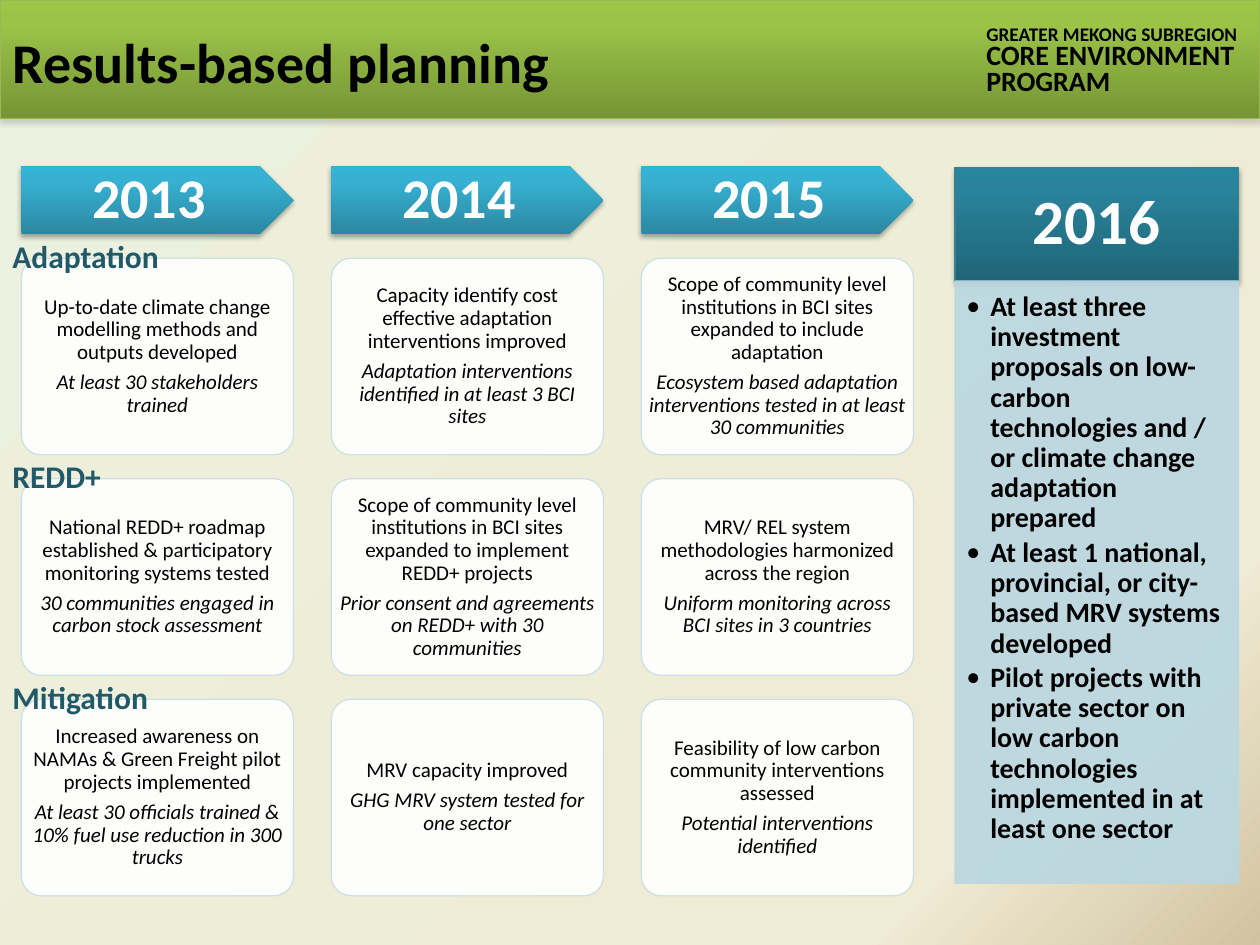
from dataclasses import dataclass
from typing import Any

import pptx
import pptx.dml.color
import pptx.enum.shapes
import pptx.enum.text
import pptx.oxml
import pptx.oxml.ns
import pptx.util

Inches = pptx.util.Inches
Pt = pptx.util.Pt
SHAPE = pptx.enum.shapes.MSO_SHAPE
ALIGN = pptx.enum.text.PP_ALIGN
ANCHOR = pptx.enum.text.MSO_ANCHOR

COLUMN_LEFT, COLUMN_PITCH, COLUMN_WIDTH = 0.17, 2.46, 2.16
ARROW_TOP, ARROW_HEIGHT = 1.32, 0.54
CARD_TOP, CARD_PITCH, CARD_HEIGHT = 2.05, 1.75, 1.56
LABEL_RISE = 0.22


@dataclass
class Box:
    left: float
    top: float
    width: float
    height: float


@dataclass
class Gradient:
    stops: tuple[tuple[int, str], ...]
    angle: int | None = None


@dataclass
class Milestone:
    outcome: str
    target: str


@dataclass
class Theme:
    label: str
    milestones: tuple[Milestone, ...]


BACKGROUND = Gradient(((0, "EBF1DE"), (82, "F0EBD5"), (100, "D1C39F")))
HEADER_GREEN = Gradient(((0, "9CC746"), (20, "9BC348"), (100, "769535")), 90)
ARROW_BLUE = Gradient(((0, "2A88A2"), (80, "37B1D2"), (100, "34B4D6")), 270)
GOAL_BLUE = Gradient(((0, "1F6577"), (80, "29839B"), (100, "27859E")), 270)

YEARS = ("2013", "2014", "2015")
THEMES = (
    Theme("Adaptation", (
        Milestone("Up-to-date climate change modelling methods and outputs developed",
                  "At least 30 stakeholders trained"),
        Milestone("Capacity identify cost effective adaptation interventions improved",
                  "Adaptation interventions identified in at least 3 BCI sites"),
        Milestone("Scope of community level institutions in BCI sites expanded to include adaptation",
                  "Ecosystem based adaptation interventions tested in at least 30 communities"))),
    Theme("REDD+", (
        Milestone("National REDD+ roadmap established & participatory monitoring systems tested",
                  "30 communities engaged in carbon stock assessment"),
        Milestone("Scope of community level institutions in BCI sites expanded to implement REDD+ projects",
                  "Prior consent and agreements on REDD+ with 30 communities"),
        Milestone("MRV/ REL system methodologies harmonized across the region",
                  "Uniform monitoring across BCI sites in 3 countries"))),
    Theme("Mitigation", (
        Milestone("Increased awareness on NAMAs & Green Freight pilot projects implemented",
                  "At least 30 officials trained & 10% fuel use reduction in 300 trucks"),
        Milestone("MRV capacity improved", "GHG MRV system tested for one sector"),
        Milestone("Feasibility of low carbon community interventions assessed",
                  "Potential interventions identified"))),
)
GOALS = (
    "At least three investment proposals on low-carbon technologies and / or climate change adaptation prepared",
    "At least 1 national, provincial, or city-based MRV systems developed",
    "Pilot projects with private sector on low carbon technologies implemented in at least one sector",
)


def color(value: str) -> pptx.dml.color.RGBColor:
    return pptx.dml.color.RGBColor.from_string(value)


def apply(target: Any, values: dict[str, Any]) -> None:
    for name, value in values.items():
        setattr(target, name, value)


def add_element(parent: Any, markup: str) -> None:
    opening, separator, rest = markup.partition(" ")
    namespace = pptx.oxml.ns.nsdecls("a")
    parent.append(pptx.oxml.parse_xml(f"{opening} {namespace} {rest}"))


def fill_gradient(fill: Any, owner: Any, gradient: Gradient) -> None:
    fill.gradient()
    element = owner.xpath(".//a:gradFill")[0]
    for child in list(element):
        element.remove(child)
    stops = "".join(f'<a:gs pos="{position * 1000}"><a:srgbClr val="{value}"/></a:gs>'
                    for position, value in gradient.stops)
    add_element(element, f"<a:gsLst >{stops}</a:gsLst>")
    if gradient.angle is None:
        add_element(element, '<a:path path="circle"><a:fillToRect r="100000" b="100000"/></a:path>')
    else:
        add_element(element, f'<a:lin ang="{gradient.angle * 60000}" scaled="0"/>')


def add_shape(slide: Any, kind: Any, box: Box, fill: str | Gradient,
              line: str | None = None, shadow: str | None = None) -> Any:
    shape = slide.shapes.add_shape(kind, Inches(box.left), Inches(box.top),
                                   Inches(box.width), Inches(box.height))
    shape.shadow.inherit = False
    properties = shape.element.spPr
    if isinstance(fill, Gradient):
        fill_gradient(shape.fill, properties, fill)
    else:
        shape.fill.solid()
        shape.fill.fore_color.rgb = color(fill)
    if line:
        shape.line.color.rgb = color(line)
        shape.line.width = Pt(0.75)
    else:
        shape.line.fill.background()
    if isinstance(fill, str):
        for swatch in properties.xpath(".//a:srgbClr"):
            add_element(swatch, '<a:alpha val="90000"/>')
    if shadow:
        add_element(properties.xpath("./a:effectLst")[0],
                    f'<a:outerShdw blurRad="{Pt(3.1)}" dist="{Pt(1.8)}" dir="5400000" rotWithShape="0">'
                    f'<a:srgbClr val="{shadow}"><a:alpha val="35000"/></a:srgbClr></a:outerShdw>')
    return shape


def set_frame(shape: Any, insets: tuple[float, float, float, float], anchor: Any) -> None:
    sides = ("margin_left", "margin_top", "margin_right", "margin_bottom")
    margins = {side: Inches(inset) for side, inset in zip(sides, insets)}
    apply(shape.text_frame, {"word_wrap": True, "vertical_anchor": anchor, **margins})


def write(shape: Any, position: int, text: str, size: float, ink: str = "000000",
          bullet: bool = False, layout: dict[str, Any] | None = None, **font: Any) -> None:
    frame = shape.text_frame
    paragraph = frame.add_paragraph() if position else frame.paragraphs[0]
    if bullet:
        properties = paragraph._p.get_or_add_pPr()
        apply_indent = {"marL": Inches(0.19), "indent": -Inches(0.19)}
        for name, value in apply_indent.items():
            properties.set(name, str(value))
        add_element(properties, '<a:buFont typeface="Calibri"/>')
        add_element(properties, '<a:buChar char="•"/>')
    apply(paragraph, {"alignment": ALIGN.LEFT, **(layout or {})})
    run = paragraph.add_run()
    run.text = text
    apply(run.font, {"name": "Calibri", "size": Pt(size), **font})
    run.font.color.rgb = color(ink)


def add_text(slide: Any, box: Box) -> Any:
    shape = slide.shapes.add_textbox(Inches(box.left), Inches(box.top),
                                     Inches(box.width), Inches(box.height))
    set_frame(shape, (0.1, 0.05, 0.1, 0.05), ANCHOR.TOP)
    return shape


def draw_header(slide: Any) -> None:
    add_shape(slide, SHAPE.RECTANGLE, Box(0, 0, 10, 0.94), HEADER_GREEN, "98B954", "808080")
    program = add_text(slide, Box(7.73, 0.1, 2.46, 0.73))
    for position, (text, size) in enumerate((("GREATER MEKONG SUBREGION", 11), ("CORE ENVIRONMENT PROGRAM", 16))):
        write(program, position, text, size, layout={"line_spacing": Pt(15)}, bold=True)
    write(add_text(slide, Box(0, 0.17, 9, 0.75)), 0, "Results-based planning", 32, bold=True)


def draw_year(slide: Any, left: float, year: str) -> None:
    arrow = add_shape(slide, SHAPE.PENTAGON, Box(left, ARROW_TOP, COLUMN_WIDTH, ARROW_HEIGHT),
                      ARROW_BLUE, shadow="000000")
    set_frame(arrow, (0.04,) * 4, ANCHOR.MIDDLE)
    write(arrow, 0, year, 32, "FFFFFF", layout={"alignment": ALIGN.CENTER, "line_spacing": 0.9}, bold=True)


def draw_card(slide: Any, left: float, top: float, milestone: Milestone) -> None:
    card = add_shape(slide, SHAPE.ROUNDED_RECTANGLE, Box(left, top, COLUMN_WIDTH, CARD_HEIGHT),
                     "FFFFFF", "CBDEE5")
    card.adjustments[0] = 0.1
    set_frame(card, (0.01,) * 4, ANCHOR.MIDDLE)
    layout = {"alignment": ALIGN.CENTER, "line_spacing": 0.9, "space_after": Pt(4.2)}
    for position, text in enumerate((milestone.outcome, milestone.target)):
        write(card, position, text, 12, layout=layout, italic=position == 1)


def draw_goals(slide: Any) -> None:
    heading = add_shape(slide, SHAPE.RECTANGLE, Box(7.58, 1.33, 2.25, 0.9), GOAL_BLUE, "377F92", "000000")
    set_frame(heading, (0.28, 0.16, 0.28, 0.16), ANCHOR.MIDDLE)
    write(heading, 0, "2016", 36, "FFFFFF", layout={"alignment": ALIGN.CENTER, "line_spacing": 0.9}, bold=True)
    panel = add_shape(slide, SHAPE.RECTANGLE, Box(7.58, 2.23, 2.25, 4.78), "BAD7E2", "BAD7E2")
    set_frame(panel, (0.09, 0.09, 0.12, 0.14), ANCHOR.TOP)
    for position, goal in enumerate(GOALS):
        write(panel, position, goal, 16, bullet=True,
              layout={"line_spacing": 0.9, "space_after": Pt(2.4)}, bold=True)


def main() -> None:
    presentation = pptx.Presentation()
    apply(presentation, {"slide_width": Inches(10), "slide_height": Inches(7.5)})
    slide = presentation.slides.add_slide(presentation.slide_layouts[6])
    fill_gradient(slide.background.fill, slide.element, BACKGROUND)
    draw_header(slide)
    for column, year in enumerate(YEARS):
        left = COLUMN_LEFT + column * COLUMN_PITCH
        draw_year(slide, left, year)
        for row, theme in enumerate(THEMES):
            draw_card(slide, left, CARD_TOP + row * CARD_PITCH, theme.milestones[column])
    draw_goals(slide)
    for row, theme in enumerate(THEMES):
        label = add_text(slide, Box(0, CARD_TOP - LABEL_RISE + row * CARD_PITCH, 3.42, 0.42))
        write(label, 0, theme.label, 18, "215968", bold=True)
    presentation.save("out.pptx")


if __name__ == "__main__":
    main()
